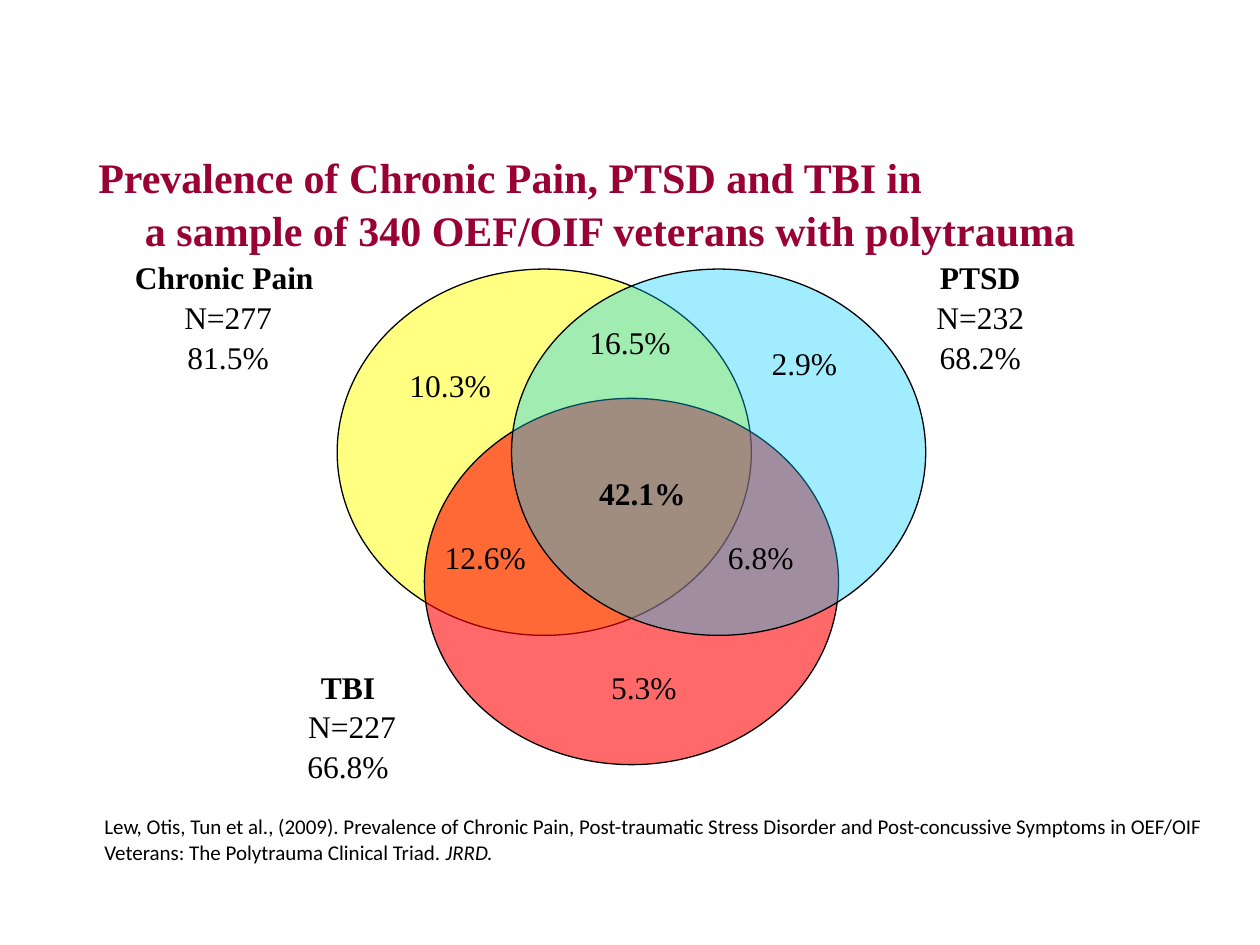
import pptx
import pptx.dml.color
import pptx.enum.shapes
import pptx.enum.text
import pptx.oxml
import pptx.oxml.ns
import pptx.util

ALIGN = pptx.enum.text.PP_ALIGN


def rgb(hex_colour):
    return pptx.dml.color.RGBColor.from_string(hex_colour)


class VennSlide:
    """Style, grid and current slide; places are in grid columns and rows."""
    SERIF, SANS = "Times New Roman", "Calibri"
    INK, ACCENT = "000000", "990033"
    LEFT, TOP, COLUMN, ROW = 0.6, 1.11, 0.173, 0.171

    def __init__(self, deck):
        self.slide = deck.slides.add_slide(deck.slide_layouts[5])

    def area(self, column, row, columns, rows):
        inches = (self.LEFT + column * self.COLUMN, self.TOP + row * self.ROW,
                  columns * self.COLUMN, rows * self.ROW)
        return [pptx.util.Inches(length) for length in inches]

    def frame(self, holder, top=0.07):
        frame = holder.text_frame
        frame.word_wrap = True
        frame.auto_size = pptx.enum.text.MSO_AUTO_SIZE.NONE
        frame.vertical_anchor = pptx.enum.text.MSO_ANCHOR.TOP
        frame.margin_left = frame.margin_right = pptx.util.Inches(0.1)
        frame.margin_top = pptx.util.Inches(top)
        frame.margin_bottom = pptx.util.Inches(0.05)
        return frame

    def style(self, paragraph, size, bold=False, align=ALIGN.LEFT,
              font=SERIF, colour=INK, spacing=1.05):
        paragraph.alignment = align
        paragraph.line_spacing = spacing
        paragraph.font.name = font
        paragraph.font.size = pptx.util.Pt(size)
        paragraph.font.bold = bold
        paragraph.font.color.rgb = rgb(colour)

    def title(self, text, place):
        title = self.slide.shapes.title
        title.left, title.top, title.width, title.height = self.area(*place)
        paragraph = self.frame(title).paragraphs[0]
        paragraph.text = text
        self.style(paragraph, 24, bold=True, colour=self.ACCENT)
        # Hanging indent: the second line starts further right
        properties = paragraph._p.get_or_add_pPr()
        properties.set("marL", str(pptx.util.Inches(0.45)))
        properties.set("indent", str(pptx.util.Inches(-0.37)))

    def circle(self, column, row, colour, opacity):
        circle = self.slide.shapes.add_shape(
            pptx.enum.shapes.MSO_SHAPE.OVAL, *self.area(column, row, 19, 17))
        circle.shadow.inherit = False
        circle.fill.solid()
        circle.fill.fore_color.rgb = rgb(colour)
        tint = circle._element.spPr.find(".//" + pptx.oxml.ns.qn("a:srgbClr"))
        alpha = pptx.oxml.parse_xml(
            f'<a:alpha {pptx.oxml.ns.nsdecls("a")} val="{opacity * 1000}"/>')
        tint.append(alpha)
        circle.line.color.rgb = rgb(self.INK)
        circle.line.width = pptx.util.Pt(0.75)

    def label(self, lines, place, bold_first=False, align=ALIGN.CENTER):
        frame = self.frame(self.slide.shapes.add_textbox(*self.area(*place)))
        for index, line in enumerate(lines):
            paragraph = frame.add_paragraph() if index else frame.paragraphs[0]
            paragraph.text = line
            self.style(paragraph, 18, bold_first and index == 0, align)

    def citation(self, text, journal, place):
        box = self.slide.shapes.add_textbox(*self.area(*place))
        paragraph = self.frame(box, top=0.05).paragraphs[0]
        paragraph.add_run().text = text
        source = paragraph.add_run()
        source.text = journal
        source.font.italic = True
        self.style(paragraph, 12, font=self.SANS, spacing=1.0)


def main():
    deck = pptx.Presentation()
    deck.slide_width, deck.slide_height = pptx.util.Inches(10), pptx.util.Inches(7.5)
    venn = VennSlide(deck)

    venn.title("Prevalence of Chronic Pain, PTSD and TBI in\v"
               "a sample of 340 OEF/OIF veterans with polytrauma", (0, 0, 49, 5))

    # Circles: chronic pain, TBI, PTSD
    for circle in ((12, 6, "FFFF00", 49), (16, 12, "FF0000", 59),
                   (20, 6, "00CCFF", 37)):
        venn.circle(*circle)

    # Condition totals
    for condition, place in (
            (("PTSD", "N=232", "68.2%"), (37, 5, 9, 7)),
            (("TBI", " N=227", "66.8%"), (8, 24, 9, 7)),
            (("Chronic Pain ", "N=277", "81.5%"), (2, 5, 10, 7))):
        venn.label(condition, place, bold_first=True)

    # Share of each region
    for share, place in ((" 2.9%", (31, 9, 6, 4)), ("16.5%", (23, 8, 6, 3)),
                         (" 6.8%", (29, 18, 6, 3)), ("5.3%", (24, 24, 5, 3)),
                         (" 12.6%", (16, 18, 7, 3))):
        venn.label([share], place, align=ALIGN.LEFT)
    venn.label([" 10.3%"], (14, 10, 6, 3))
    venn.label(["42.1%"], (23, 15, 6, 3), bold_first=True)

    venn.citation(
        "Lew, Otis, Tun et al., (2009). Prevalence of Chronic Pain, Post-traumatic "
        "Stress Disorder and Post-concussive Symptoms in OEF/OIF Veterans: "
        "The Polytrauma Clinical Triad. ", "JRRD.", (0.75, 31, 53.6, 3))

    deck.save("out.pptx")


if __name__ == "__main__":
    main()
